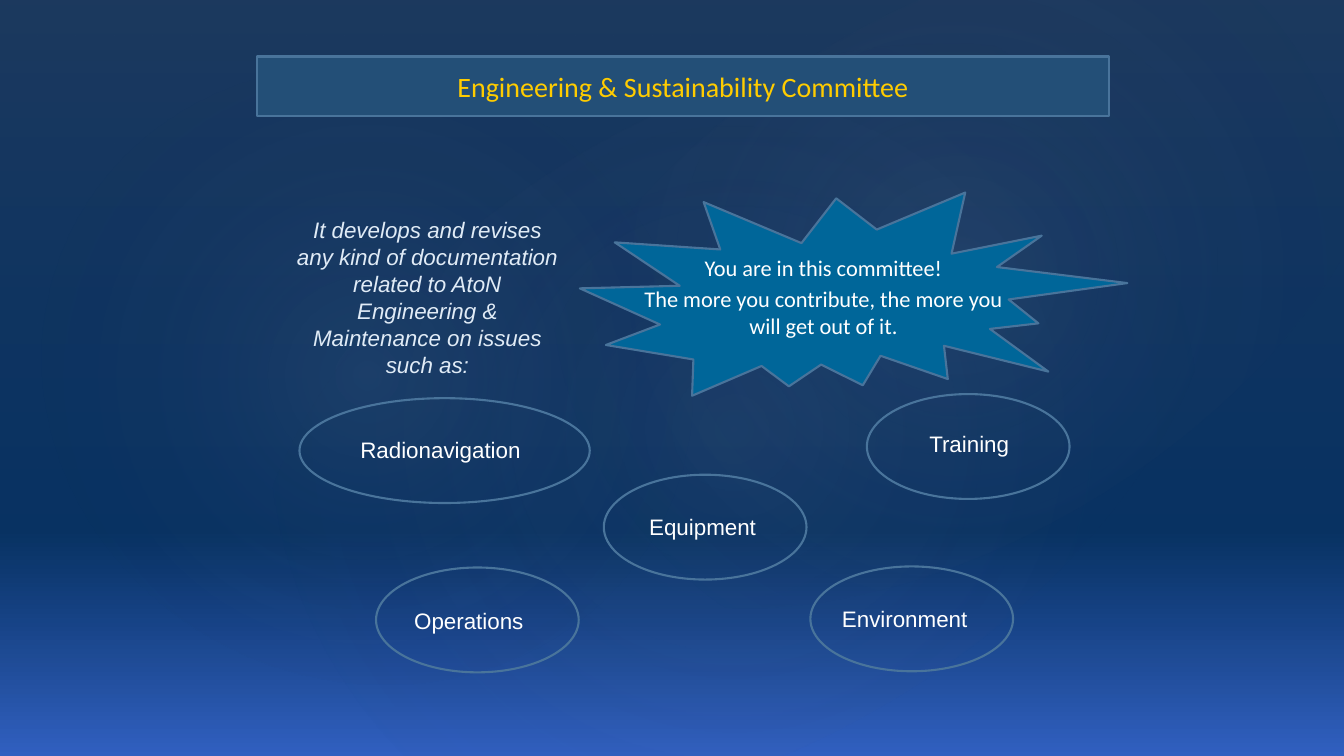
"""Builds the Engineering & Sustainability Committee slide."""
from lxml.etree import SubElement
from pptx import Presentation
from pptx.dml.color import RGBColor
from pptx.enum.shapes import MSO_SHAPE
from pptx.enum.text import MSO_ANCHOR, MSO_AUTO_SIZE, PP_ALIGN
from pptx.oxml import parse_xml
from pptx.oxml.ns import nsdecls, qn
from pptx.util import Inches, Pt

prs = Presentation()
prs.slide_width, prs.slide_height = Inches(13.33), Inches(7.5)
COL, ROW = prs.slide_width / 100, prs.slide_height / 100
OUTLINE = "49749B"
s = prs.slides.add_slide(prs.slide_layouts[5])
rgb = RGBColor.from_string


def set_gradient(owner, fill, stops, radial=False):
    """Give a fill its stops of position, colour and opacity in percent."""
    fill.gradient()
    grad = owner._element.find(".//" + qn("a:gradFill"))
    for child in list(grad):
        grad.remove(child)
    stop_list = SubElement(grad, qn("a:gsLst"))
    for position, color, opacity in stops:
        gs = SubElement(stop_list, qn("a:gs"), pos=str(position * 1000))
        clr = SubElement(gs, qn("a:srgbClr"), val=color)
        SubElement(clr, qn("a:alpha"), val=str(opacity * 1000))
    if radial:
        circle = SubElement(grad, qn("a:path"), path="circle")
        SubElement(circle, qn("a:fillToRect"), l="50000", t="50000", r="50000", b="50000")
    else:
        SubElement(grad, qn("a:lin"), ang="5400000", scaled="0")


def write(sp, lines, size=16, font="Arial", color="FFFFFF", align=PP_ALIGN.CENTER, italic=None):
    """Fill a shape with one paragraph per line."""
    tf = sp.text_frame
    tf.word_wrap, tf.auto_size = True, MSO_AUTO_SIZE.NONE
    for i, line in enumerate(lines):
        p = tf.add_paragraph() if i else tf.paragraphs[0]
        p.alignment, p.space_before = align, Pt(size * 0.2)
        r = p.add_run()
        r.text = line
        r.font.size, r.font.name, r.font.italic = Pt(size), font, italic
        r.font.color.rgb = rgb(color)


set_gradient(s, s.background.fill, [(0, "003366", 100), (70, "003366", 100), (100, "3366CC", 100)])

SHADE = [(0, "504652", 36), (100, "242852", 10)]
FAINT_GLOW = [(0, "C4BCC6", 7), (58, "242852", 0)]
GLOW = [(0, "C4BCC6", 8), (58, "242852", 0)]
backdrop = [
    (MSO_SHAPE.RECTANGLE, 0, 0, 100, 100, 0, SHADE),
    (MSO_SHAPE.OVAL, 15, 15.2, 79.2, 83.2, 328.7, FAINT_GLOW),
    (MSO_SHAPE.OVAL, 4.58, 6.13, 45.45, 87.07, 294.3, GLOW),
    (MSO_SHAPE.OVAL, 35.85, 1.73, 70.88, 69.33, 328.7, GLOW),
]
for kind, x, y, w, h, turn, stops in backdrop:
    sp = s.shapes.add_shape(kind, int(x * COL), int(y * ROW), int(w * COL), int(h * ROW))
    sp.rotation, sp.shadow.inherit = turn, False
    sp.line.fill.background()
    set_gradient(sp, sp.fill, stops, radial=kind == MSO_SHAPE.OVAL)

title = s.shapes.title
title.left, title.top = int(19.13 * COL), int(7.47 * ROW)
title.width, title.height = int(63.38 * COL), int(7.87 * ROW)
title._element.spPr.find(qn("a:xfrm")).addnext(
    parse_xml(f'<a:prstGeom {nsdecls("a")} prst="roundRect"><a:avLst/></a:prstGeom>'))
title.fill.solid()
title.fill.fore_color.rgb = rgb("234F77")
title.line.color.rgb, title.line.width = rgb(OUTLINE), Pt(1.5)
title.text_frame.vertical_anchor = MSO_ANCHOR.MIDDLE
write(title, ["Engineering & Sustainability Committee"], 20, "Calibri", "FFCC00")
s.shapes._spTree.append(title._element)

intro = s.shapes.add_textbox(int(21.3 * COL), int(28 * ROW), int(21 * COL), int(22.93 * ROW))
write(intro, ["It develops and revises any kind of documentation related to "
              "AtoN Engineering & Maintenance on issues such as:"], color="E0EBF6", italic=True)

burst = s.shapes.add_shape(MSO_SHAPE.EXPLOSION2, int(43.2 * COL), int(23.87 * ROW),
                           int(40.43 * COL), int(30.8 * ROW))
burst.rotation, burst.shadow.inherit = 6.5, False
burst.fill.solid()
burst.fill.fore_color.rgb = rgb("006699")
burst.line.color.rgb, burst.line.width = rgb(OUTLINE), Pt(1.5)

message = s.shapes.add_textbox(int(46.2 * COL), int(32.93 * ROW), int(30.15 * COL), int(12.8 * ROW))
write(message, ["You are in this committee!",
                "The more you contribute, the more you will get out of it."], font="Calibri")

topics = [
    ("Training", 64.5, 52.13, 15.08, 64.2, 56.27, 15.83, PP_ALIGN.CENTER),
    ("Operations", 27.98, 75.07, 15.08, 30.08, 79.6, 10.65, PP_ALIGN.LEFT),
    ("Radionavigation", 22.28, 52.67, 21.6, 25.8, 57.07, 13.95, PP_ALIGN.CENTER),
    ("Environment", 60.3, 74.93, 15.08, 61.2, 79.33, 12.23, PP_ALIGN.CENTER),
    ("Equipment", 44.93, 62.8, 15.08, 47.4, 67.2, 9.75, PP_ALIGN.CENTER),
]
for name, x, y, w, label_x, label_y, label_w, align in topics:
    label = s.shapes.add_textbox(int(label_x * COL), int(label_y * ROW), int(label_w * COL), int(4.93 * ROW))
    write(label, [name], align=align)
    oval = s.shapes.add_shape(MSO_SHAPE.OVAL, int(x * COL), int(y * ROW), int(w * COL), int(13.87 * ROW))
    oval.shadow.inherit = False
    oval.fill.background()
    oval.line.color.rgb, oval.line.width = rgb(OUTLINE), Pt(1.5)

prs.save("out.pptx")
